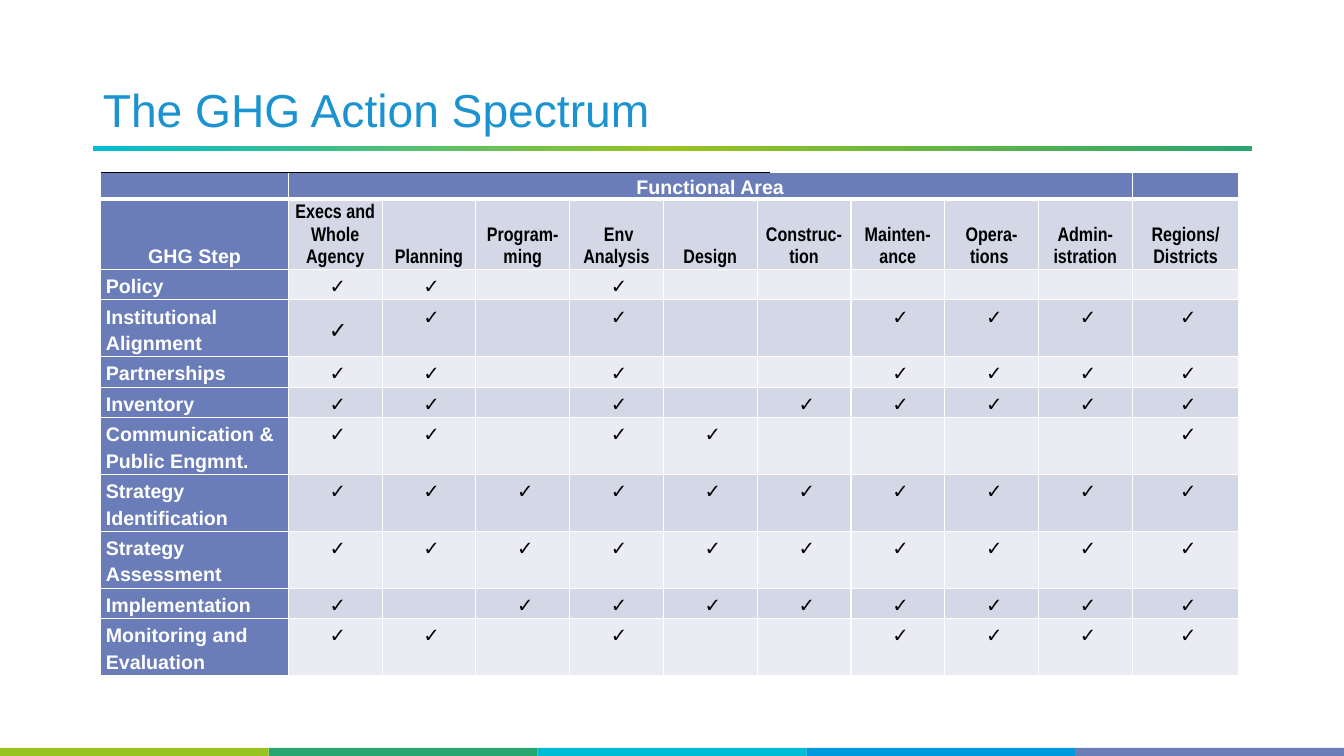
"""Builds the GHG Action Spectrum slide."""
from dataclasses import dataclass

from lxml import etree
from pptx import Presentation
from pptx import util as u
from pptx.dml.color import RGBColor
from pptx.enum import shapes, text
from pptx.oxml import ns


@dataclass(frozen=True)
class Theme:
    font: str = "Arial"
    narrow: str = "Arial Narrow"
    title: str = "1C93D1"
    header: str = "6B7DB8"
    bands: tuple = ("D4D7E6", "EBECF3")
    white: str = "FFFFFF"
    black: str = "000000"
    footer: tuple = ("98C31F", "27A670", "00BDD5", "0199DD", "6B7DB7")
    rule: tuple = ((0, "00BDD5"), (50, "98C31F"), (100, "27A670"))
    title_size: int = 33
    body_size: int = 14
    large_tick: int = 16


TICK = " ✓"
AREAS = ["Execs and Whole Agency", "Planning", "Program-ming", " Env Analysis",
         "Design", "Construc-tion", "Mainten-ance", "Opera-tions ",
         "Admin-istration", "Regions/ Districts"]
STEPS = [
    ("Policy", "xx.x......", 0.3),
    ("Institutional Alignment", "xx.x..xxxx", 0.56),
    ("Partnerships", "xx.x..xxxx", 0.3),
    ("Inventory", "xx.x.xxxxx", 0.3),
    ("Communication & Public Engmnt.", "xx.xx....x", 0.56),
    ("Strategy Identification", "xxxxxxxxxx", 0.56),
    ("Strategy Assessment", "xxxxxxxxxx", 0.56),
    ("Implementation", "x.xxxxxxxx", 0.3),
    ("Monitoring and Evaluation", "xx.x..xxxx", 0.56),
]
COLUMN_WIDTHS = [1.86] + [0.93] * 9 + [1.06]
HEADER_HEIGHTS = [0.26, 0.69]


def write(frame, words, *, size, font, color, bold=False, align=text.PP_ALIGN.LEFT,
          spacing=1.2, after=6):
    """Put one formatted paragraph in a text frame."""
    paragraph = frame.paragraphs[0]
    paragraph.alignment = align
    paragraph.line_spacing = spacing
    paragraph.space_after = u.Pt(after)
    if not words:
        etree.SubElement(paragraph._p, ns.qn("a:endParaRPr"), sz=str(size * 100))
        return
    run = paragraph.add_run()
    run.text = words
    run.font.size = u.Pt(size)
    run.font.name = font
    run.font.bold = bold
    run.font.color.rgb = RGBColor.from_string(color)


class SlideBuilder:
    """Draws styled elements on the current slide."""

    def __init__(self, slide, theme):
        self.slide = slide
        self.theme = theme

    def title(self, words, left, top, width, height):
        """Place and format the title placeholder."""
        shape = self.slide.shapes.title
        shape.left, shape.top = u.Inches(left), u.Inches(top)
        shape.width, shape.height = u.Inches(width), u.Inches(height)
        frame = shape.text_frame
        frame.word_wrap = True
        frame.auto_size = text.MSO_AUTO_SIZE.NONE
        frame.vertical_anchor = text.MSO_ANCHOR.BOTTOM
        write(frame, words, size=self.theme.title_size, font=self.theme.font,
              color=self.theme.title, spacing=0.9, after=0)

    def bar(self, left, top, width, height, color):
        """Add a rectangle without an outline."""
        shape = self.slide.shapes.add_shape(
            shapes.MSO_SHAPE.RECTANGLE, u.Inches(left), u.Inches(top),
            u.Inches(width), u.Inches(height))
        shape.shadow.inherit = False
        shape.line.fill.background()
        shape.fill.solid()
        shape.fill.fore_color.rgb = RGBColor.from_string(color)
        return shape

    def gradient_bar(self, left, top, width, height, stops):
        """Add a rectangle with a horizontal gradient."""
        shape = self.bar(left, top, width, height, stops[0][1])
        shape.fill.gradient()
        shape.fill.gradient_angle = 0
        stop_list = shape._element.spPr.find(".//" + ns.qn("a:gsLst"))
        for stop in list(stop_list):
            stop_list.remove(stop)
        for position, color in stops:
            stop = etree.SubElement(stop_list, ns.qn("a:gs"), pos=str(position * 1000))
            etree.SubElement(stop, ns.qn("a:srgbClr"), val=color)

    def line(self, left, top, right, bottom, color, width):
        """Add a straight line."""
        connector = self.slide.shapes.add_connector(
            shapes.MSO_CONNECTOR.STRAIGHT, u.Inches(left), u.Inches(top),
            u.Inches(right), u.Inches(bottom))
        connector.line.color.rgb = RGBColor.from_string(color)
        connector.line.width = u.Pt(width)
        etree.SubElement(connector._element.spPr, ns.qn("a:effectLst"))

    def table(self, left, top, widths, heights):
        """Add a plain table with the given column widths and row heights."""
        table = self.slide.shapes.add_table(
            len(heights), len(widths), u.Inches(left), u.Inches(top),
            u.Inches(sum(widths)), u.Inches(sum(heights))).table
        table.first_row = table.horz_banding = False
        for column, width in zip(table.columns, widths):
            column.width = u.Inches(width)
        for row, height in zip(table.rows, heights):
            row.height = u.Inches(height)
        return table

    def cell(self, cell, words, fill, *, anchor=text.MSO_ANCHOR.TOP, insets=(0.05, 0.02),
             top_border=1, bottom_border=1, **style):
        """Fill, border and write one table cell."""
        cell.margin_left = cell.margin_right = u.Inches(insets[0])
        cell.margin_top = cell.margin_bottom = u.Inches(insets[1])
        cell.vertical_anchor = anchor
        borders = {"lnL": 1, "lnR": 1, "lnT": top_border, "lnB": bottom_border}
        for side, width in borders.items():
            line = etree.SubElement(cell._tc.get_or_add_tcPr(), ns.qn("a:" + side),
                                    w=str(u.Pt(width)))
            solid = etree.SubElement(line, ns.qn("a:solidFill"))
            etree.SubElement(solid, ns.qn("a:srgbClr"), val=self.theme.white)
        cell.fill.solid()
        cell.fill.fore_color.rgb = RGBColor.from_string(fill)
        style = {"size": self.theme.body_size, "font": self.theme.font, **style}
        write(cell.text_frame, words, **style)


def fill_matrix(builder, table):
    """Write the headers and the ticks of the step by area matrix."""
    theme = builder.theme
    center, bottom = text.PP_ALIGN.CENTER, text.MSO_ANCHOR.BOTTOM
    label = {"color": theme.white, "bold": True}

    table.cell(0, 1).merge(table.cell(0, 9))
    for column in range(len(COLUMN_WIDTHS)):
        builder.cell(table.cell(0, column), "Functional Area" if column == 1 else "",
                     theme.header, anchor=bottom, insets=(0.07, 0), bottom_border=3,
                     align=center, **label)

    builder.cell(table.cell(1, 0), "GHG Step", theme.header, anchor=bottom,
                 top_border=3, align=center, **label)
    for column, area in enumerate(AREAS, 1):
        builder.cell(table.cell(1, column), area, theme.bands[0], anchor=bottom,
                     top_border=3, align=center, font=theme.narrow,
                     color=theme.black, bold=True)

    for row, (step, marks, _) in enumerate(STEPS, 2):
        builder.cell(table.cell(row, 0), step, theme.header, **label)
        for column, mark in enumerate(marks, 1):
            large = step == "Institutional Alignment" and column == 1
            builder.cell(table.cell(row, column), TICK if mark == "x" else "",
                         theme.bands[(row + 1) % 2], align=center, color=theme.black,
                         anchor=text.MSO_ANCHOR.MIDDLE if large else text.MSO_ANCHOR.TOP,
                         size=theme.large_tick if large else theme.body_size)


def main():
    """Build and save the presentation."""
    presentation = Presentation()
    presentation.slide_width = u.Inches(13.33)
    presentation.slide_height = u.Inches(7.5)
    slide = presentation.slides.add_slide(presentation.slide_layouts[5])
    theme = Theme()
    builder = SlideBuilder(slide, theme)

    builder.gradient_bar(0.92, 1.45, 11.5, 0.05, theme.rule)
    bar_width = 13.33 / len(theme.footer)
    for index, color in enumerate(theme.footer):
        builder.bar(index * bar_width, 7.42, bar_width, 0.1, color)
    builder.title("The GHG Action Spectrum", 0.92, 0.11, 11.5, 1.3)

    heights = HEADER_HEIGHTS + [height for _, _, height in STEPS]
    fill_matrix(builder, builder.table(1, 1.71, COLUMN_WIDTHS, heights))
    builder.line(1, 1.71, 7.64, 1.71, theme.black, 0.75)
    presentation.save("out.pptx")


if __name__ == "__main__":
    main()
